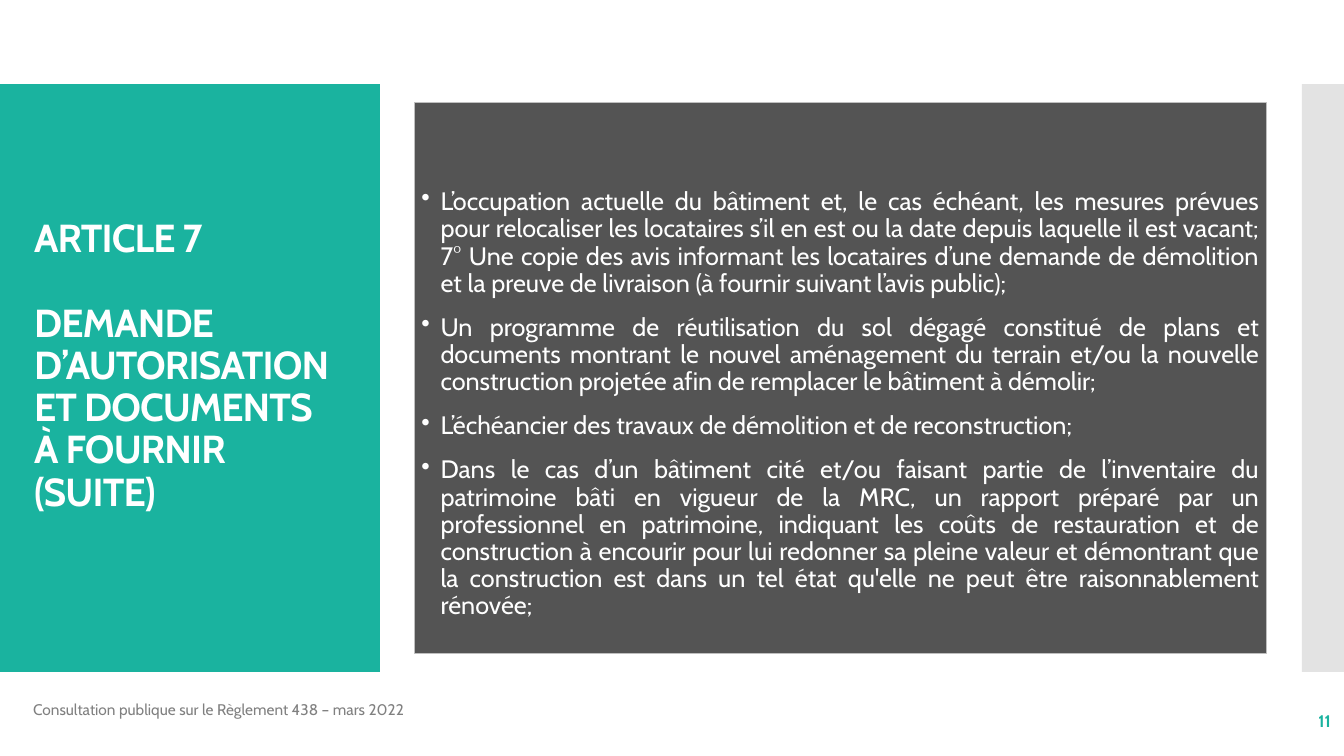
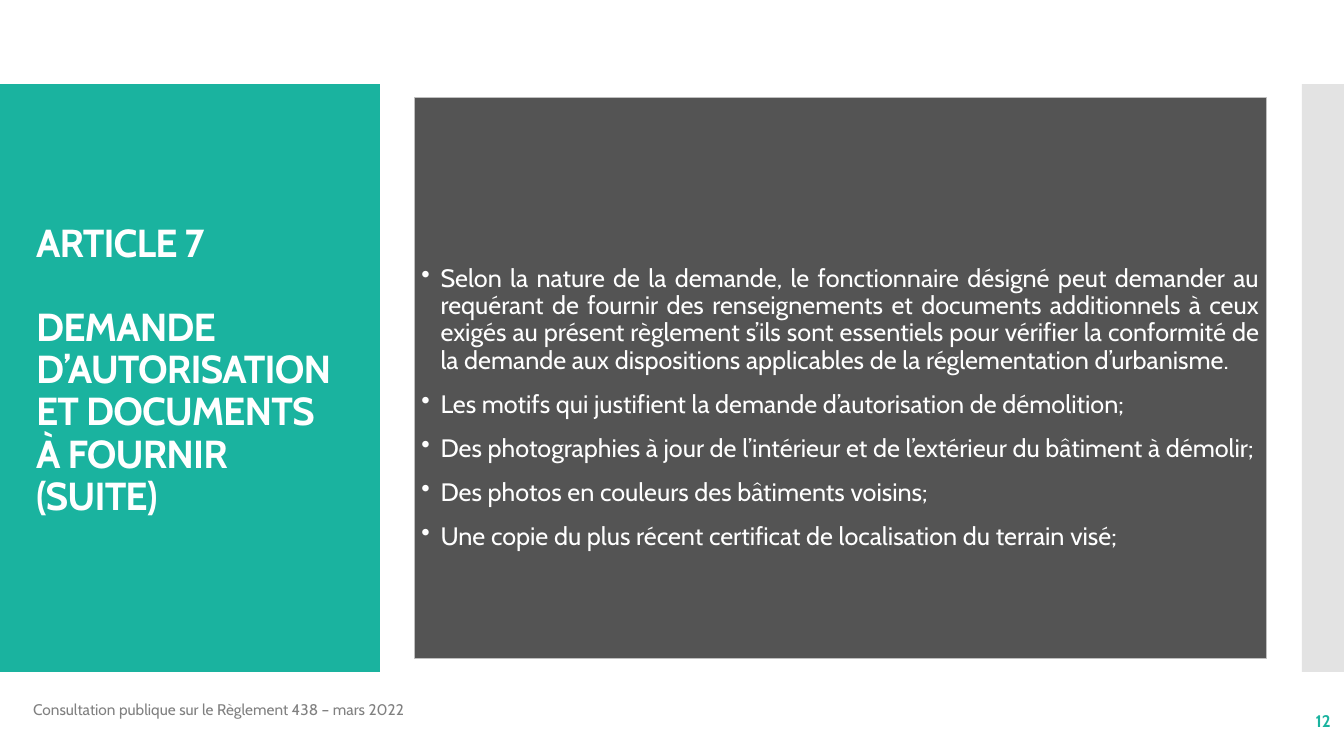
from lxml import etree
from pptx import Presentation
from pptx.dml.color import RGBColor
from pptx.enum import shapes, text
from pptx.oxml import ns
from pptx.util import Pt

TEAL, PALE, DARK = "1AB39F", "E3E3E3", "545454"
BORDER, GREY, WHITE = "BFBFBF", "808080", "FFFFFF"
WIDTH, HEIGHT = 960, 540
BAND_TOP, BAND_HEIGHT = 60, 420
PANEL_LEFT, PANEL_WIDTH = 296, 608.4
TITLE = ("ARTICLE 7", "DEMANDE D’AUTORISATION ET DOCUMENTS À FOURNIR (SUITE)")
FOOTER = "Consultation publique sur le Règlement 438 – mars 2022"

# Each page: number, title position, panel top and height, space above the list, items
PAGES = [
    (11, (17.3, 153), (73.4, 393.2), 61.5, [
        "L’occupation actuelle du bâtiment et, le cas échéant, les mesures prévues pour "
        "relocaliser les locataires s’il en est ou la date depuis laquelle il est vacant; "
        "7° Une copie des avis informant les locataires d’une demande de démolition et la "
        "preuve de livraison (à fournir suivant l’avis public);",
        "Un programme de réutilisation du sol dégagé constitué de plans et documents "
        "montrant le nouvel aménagement du terrain et/ou la nouvelle construction projetée "
        "afin de remplacer le bâtiment à démolir;",
        "L’échéancier des travaux de démolition et de reconstruction;",
        "Dans le cas d’un bâtiment cité et/ou faisant partie de l’inventaire du patrimoine "
        "bâti en vigueur de la MRC, un rapport préparé par un professionnel en patrimoine, "
        "indiquant les coûts de restauration et de construction à encourir pour lui redonner "
        "sa pleine valeur et démontrant que la construction est dans un tel état qu'elle ne "
        "peut être raisonnablement rénovée;",
    ]),
    (12, (18.7, 156), (69.8, 400.4), 120, [
        "Selon la nature de la demande, le fonctionnaire désigné peut demander au requérant "
        "de fournir des renseignements et documents additionnels à ceux exigés au présent "
        "règlement s’ils sont essentiels pour vérifier la conformité de la demande aux "
        "dispositions applicables de la réglementation d’urbanisme.",
        "Les motifs qui justifient la demande d’autorisation de démolition;",
        "Des photographies à jour de l’intérieur et de l’extérieur du bâtiment à démolir;",
        "Des photos en couleurs des bâtiments voisins;",
        "Une copie du plus récent certificat de localisation du terrain visé;",
    ]),
]


def rgb(value):
    return RGBColor.from_string(value)


def add_bullet(paragraph, indent=13.7):
    properties = paragraph._p.get_or_add_pPr()
    properties.set("marL", str(Pt(indent)))
    properties.set("indent", str(-Pt(indent)))
    etree.SubElement(properties, ns.qn("a:buChar")).set("char", "•")


class Deck:
    font = "Cabin"

    def __init__(self):
        self.presentation = Presentation()
        self.presentation.slide_width = Pt(WIDTH)
        self.presentation.slide_height = Pt(HEIGHT)
        self.slide = None

    def new_slide(self):
        """Start a slide with the side bands and the footer."""
        blank = self.presentation.slide_layouts[6]
        self.slide = self.presentation.slides.add_slide(blank)
        self.rectangle(0, BAND_TOP, 271.4, BAND_HEIGHT, TEAL)
        self.rectangle(930, BAND_TOP, 30, BAND_HEIGHT, PALE)
        self.label(16.6, 492.5, 576, 28.8, FOOTER, 11, GREY)

    def rectangle(self, left, top, width, height, fill, line=None):
        shape = self.slide.shapes.add_shape(
            shapes.MSO_SHAPE.RECTANGLE, Pt(left), Pt(top), Pt(width), Pt(height))
        shape.shadow.inherit = False
        shape.fill.solid()
        shape.fill.fore_color.rgb = rgb(fill)
        if line:
            shape.line.color.rgb = rgb(line)
            shape.line.width = Pt(0.85)
        else:
            shape.line.fill.background()
        return shape

    def text_frame(self, left, top, width, height, anchor):
        box = self.slide.shapes.add_textbox(Pt(left), Pt(top), Pt(width), Pt(height))
        box.text_frame.word_wrap = True
        box.text_frame.vertical_anchor = anchor
        return box.text_frame

    def style(self, paragraph, size, color, bold=False, tracking=None):
        for run in paragraph.runs:
            run.font.name = self.font
            run.font.size = Pt(size)
            run.font.bold = bold
            run.font.color.rgb = rgb(color)
            if tracking:
                run._r.get_or_add_rPr().set("spc", str(tracking))

    def label(self, left, top, width, height, words, size, color, bold=False,
              align=text.PP_ALIGN.LEFT):
        frame = self.text_frame(left, top, width, height, text.MSO_ANCHOR.MIDDLE)
        frame.text = words
        frame.paragraphs[0].alignment = align
        self.style(frame.paragraphs[0], size, color, bold)

    def title(self, left, top):
        frame = self.text_frame(left, top, 231.8, 220, text.MSO_ANCHOR.TOP)
        frame.text = "\n".join(TITLE)
        for paragraph in frame.paragraphs:
            paragraph.line_spacing = 0.9
            self.style(paragraph, 27.9, WHITE, bold=True, tracking=-60)
        frame.paragraphs[0].space_after = Pt(30.2)

    def page_number(self, number):
        self.label(837.4, 500.4, 120.2, 28.8, str(number), 12, TEAL, True,
                   text.PP_ALIGN.RIGHT)

    def panel(self, top, height, space_above, items):
        """Dark panel holding a justified bullet list."""
        panel = self.rectangle(PANEL_LEFT, top, PANEL_WIDTH, height, DARK, BORDER)
        frame = panel.text_frame
        frame.word_wrap = True
        frame.vertical_anchor = text.MSO_ANCHOR.TOP
        frame.margin_left = frame.margin_right = frame.margin_bottom = Pt(5)
        frame.margin_top = Pt(space_above)
        frame.text = "\n".join(items)
        for paragraph in frame.paragraphs:
            add_bullet(paragraph)
            paragraph.alignment = text.PP_ALIGN.JUSTIFY
            paragraph.line_spacing = 0.9
            paragraph.space_after = Pt(12)
            self.style(paragraph, 18, WHITE)


def main():
    deck = Deck()
    for number, title_position, panel_extent, space_above, items in PAGES:
        deck.new_slide()
        deck.title(*title_position)
        deck.page_number(number)
        deck.panel(*panel_extent, space_above, items)
    deck.presentation.save("out.pptx")


if __name__ == "__main__":
    main()
